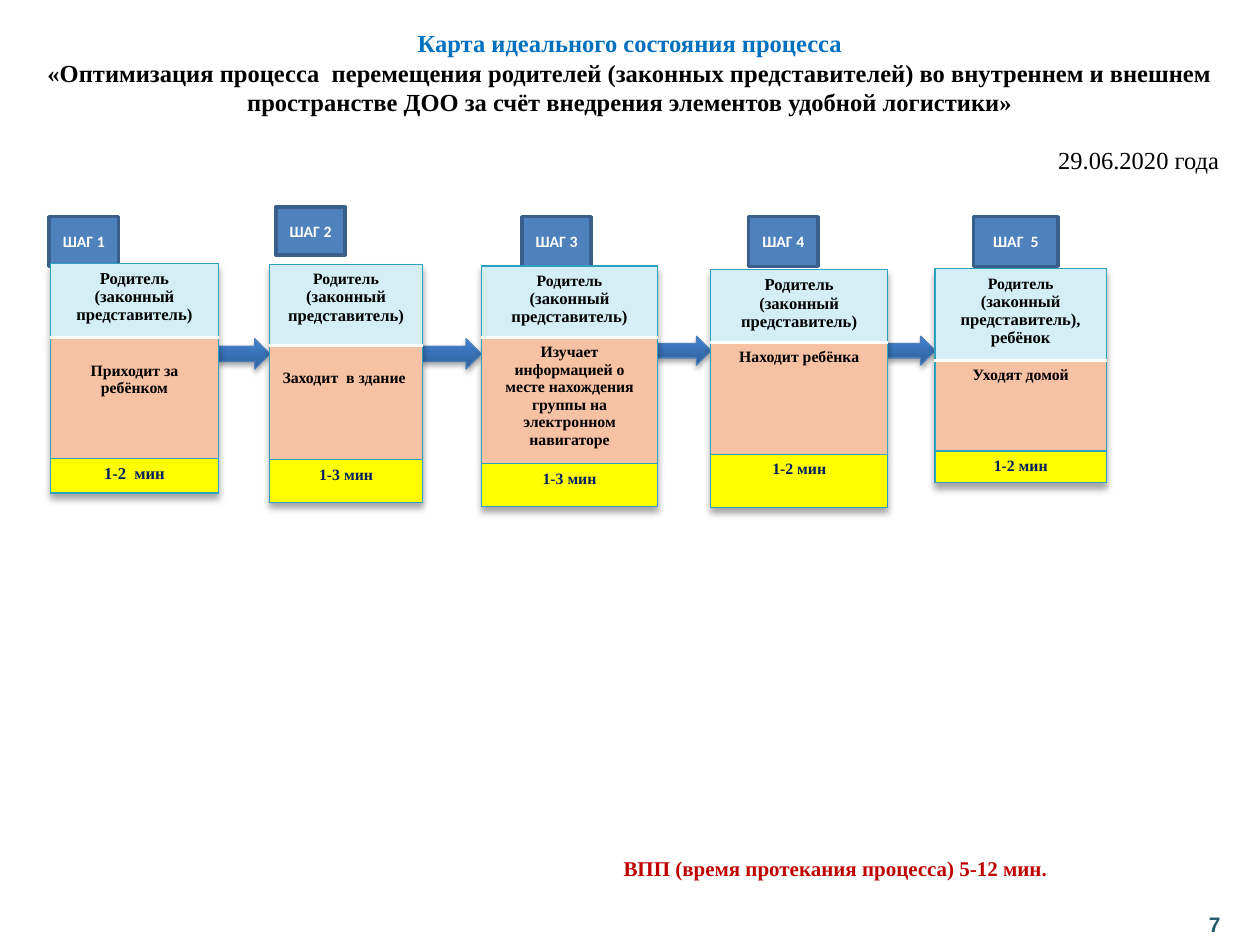
from lxml import etree
from pptx import Presentation
from pptx.dml.color import RGBColor
from pptx.enum.shapes import MSO_SHAPE
from pptx.enum.text import MSO_ANCHOR, PP_ALIGN
from pptx.oxml.ns import qn
from pptx.util import Cm, Pt

CENTER, LEFT, RIGHT = PP_ALIGN.CENTER, PP_ALIGN.LEFT, PP_ALIGN.RIGHT
MIDDLE = MSO_ANCHOR.MIDDLE
RECTANGLE, ARROW = MSO_SHAPE.RECTANGLE, MSO_SHAPE.RIGHT_ARROW
SERIF = "Times New Roman"

COLORS = {
    "black": "000000", "white": "FFFFFF", "title": "0070C0", "total": "C00000",
    "number": "215968", "tag": "4F81BD", "tag_line": "3A5F8C",
    "arrow_dark": "2F5F99", "arrow_light": "3D7CC7", "arrow_line": "4B7EBC",
    "who": "D3EEF5", "action": "F7C1A4", "time": "FFFF00",
    "time_text": "002060", "border": "2DA2BF",
}

# Content: lengths in cm; "who" holds paragraphs made of (text, size) runs
TWO_LINES = [[("Родитель", 9)], [("(законный представитель)", 9.5)]]
STEPS = [
    {"tag": "ШАГ 1", "tag_box": (0.99, 4.37, 1.4, 1), "card": (1.02, 5.31, 3.38),
     "rows": (1.5, 2.44, 0.69), "who": [[("Родитель (законный представитель)", 9.5)]],
     "action": "Приходит за ребёнком", "action_top": 0.49,
     "time": "1-2  мин", "time_size": 9.5},
    {"tag": "ШАГ 2", "tag_box": (5.56, 4.17, 1.4, 0.97), "card": (5.44, 5.33, 3.07),
     "rows": (1.63, 2.31, 0.86), "who": TWO_LINES,
     "action": "Заходит  в здание ", "action_top": 0.49,
     "time": "1-3 мин", "time_size": 9},
    {"tag": "ШАГ 3", "tag_box": (10.52, 4.37, 1.4, 1), "card": (9.7, 5.36, 3.56),
     "rows": (1.42, 2.54, 0.86), "who": TWO_LINES,
     "action": "Изучает информацией о месте нахождения группы на электронном навигаторе",
     "action_top": 0.13, "time": "1-3 мин", "time_size": 9},
    {"tag": "ШАГ 4", "tag_box": (15.09, 4.37, 1.4, 1), "card": (14.33, 5.44, 3.56),
     "rows": (1.45, 2.26, 1.07), "who": [[("Родитель (законный представитель)", 9.5)]],
     "action": "Находит ребёнка", "action_top": 0.13,
     "time": "1-2 мин", "time_size": 9},
    {"tag": "ШАГ  5", "tag_box": (19.63, 4.37, 1.7, 1), "card": (18.85, 5.42, 3.45),
     "rows": (1.83, 1.83, 0.61),
     "who": [[("Родитель ", 9), ("(законный представитель), ребёнок", 9.5)]],
     "action": "Уходят домой", "action_top": 0.13,
     "time": "1-2 мин", "time_size": 9},
]
ARROW_ROWS = [(6.83, 0.61), (6.83, 0.61), (6.78, 0.58), (6.78, 0.58)]  # top, height

TITLE = [
    ("Карта идеального состояния процесса", "title"),
    ("«Оптимизация процесса  перемещения родителей (законных представителей) "
     "во внутреннем и внешнем пространстве ДОО за счёт внедрения элементов "
     "удобной логистики»", "black"),
]
# box, paragraphs, alignment, font, size, bold
TEXTS = [
    ((0, 0.45, 25.4, 2.1), TITLE, CENTER, SERIF, 14, True),
    ((18, 2.8, 6.83, 0.88), [("29.06.2020 года", "black")], RIGHT, SERIF, 14, False),
    ((12.32, 17.12, 10.31, 0.76),
     [("ВПП (время протекания процесса) 5-12 мин.", "total")], LEFT, SERIF, 12, True),
    ((24, 18.26, 0.97, 0.79), [("7", "number")], CENTER, "Arial", 12, True),
]


def rgb(name):
    return RGBColor.from_string(COLORS[name])


def style(paragraph, size, color, font=SERIF, bold=True, align=CENTER):
    paragraph.alignment = align
    paragraph.font.name = font
    paragraph.font.size = Pt(size)
    paragraph.font.bold = bold
    paragraph.font.color.rgb = rgb(color)


def add_shadow(parent, position, blur, distance):
    effects = etree.Element(qn("a:effectLst"))
    shadow = etree.SubElement(
        effects, qn("a:outerShdw"), blurRad=str(Pt(blur)), dist=str(Pt(distance)),
        dir="5400000", rotWithShape="0")
    color = etree.SubElement(shadow, qn("a:srgbClr"), val=COLORS["black"])
    etree.SubElement(color, qn("a:alpha"), val="35000")
    parent.insert(position, effects)


def set_borders(cell, top, bottom):
    properties = cell._tc.get_or_add_tcPr()
    sides = [("a:lnL", "border"), ("a:lnR", "border"), ("a:lnT", top), ("a:lnB", bottom)]
    for index, (tag, color) in enumerate(sides):
        line = etree.Element(qn(tag), w=str(Pt(2 if color == "white" else 0.79)))
        fill = etree.SubElement(line, qn("a:solidFill"))
        etree.SubElement(fill, qn("a:srgbClr"), val=COLORS[color])
        properties.insert(index, line)


def add_text(slide, box, lines, align, font, size, bold):
    frame = slide.shapes.add_textbox(*map(Cm, box)).text_frame
    frame.word_wrap = True
    for index, (text, color) in enumerate(lines):
        paragraph = frame.paragraphs[0] if index == 0 else frame.add_paragraph()
        paragraph.text = text
        style(paragraph, size, color, font, bold, align)


def add_tag(slide, step):
    shape = slide.shapes.add_shape(RECTANGLE, *map(Cm, step["tag_box"]))
    shape.shadow.inherit = False
    shape.fill.solid()
    shape.fill.fore_color.rgb = rgb("tag")
    shape.line.color.rgb = rgb("tag_line")
    shape.line.width = Pt(2)
    frame = shape.text_frame
    frame.margin_left = frame.margin_right = 0
    frame.vertical_anchor = MIDDLE
    frame.text = step["tag"]
    style(frame.paragraphs[0], 9, "white", "Calibri")


def add_arrow(slide, step, following, top, height):
    left, _, width = step["card"]
    start = left + width
    shape = slide.shapes.add_shape(
        ARROW, Cm(start), Cm(top), Cm(following["card"][0] - start), Cm(height))
    shape.fill.gradient()
    shape.fill.gradient_angle = 90
    stops = shape.fill.gradient_stops
    for stop, color, position in zip(stops, ("arrow_dark", "arrow_light"), (0, 0.8)):
        stop.color.rgb = rgb(color)
        stop.position = position
    shape.line.color.rgb = rgb("arrow_line")
    shape.line.width = Pt(0.75)
    properties = shape._element.spPr
    add_shadow(properties, len(properties), 3.1, 1.8)


def add_card(slide, step):
    left, top, width = step["card"]
    table = slide.shapes.add_table(
        3, 1, Cm(left), Cm(top), Cm(width), Cm(sum(step["rows"]))).table
    table.horz_banding = False
    add_shadow(table._tbl.tblPr, 0, 4, 3)
    rows = [
        ("who", step["who"], "black", "border", "white"),
        ("action", [[(step["action"], 9)]], "black", "white", "border"),
        ("time", [[(step["time"], step["time_size"])]], "time_text", "border", "border"),
    ]
    for index, (fill, paragraphs, color, upper, lower) in enumerate(rows):
        table.rows[index].height = Cm(step["rows"][index])
        cell = table.cell(index, 0)
        cell.fill.solid()
        cell.fill.fore_color.rgb = rgb(fill)
        set_borders(cell, upper, lower)
        if fill == "action":
            cell.margin_top = Cm(step["action_top"])
        frame = cell.text_frame
        for number, runs in enumerate(paragraphs):
            paragraph = frame.paragraphs[0] if number == 0 else frame.add_paragraph()
            style(paragraph, runs[0][1], color)
            for text, size in runs:
                run = paragraph.add_run()
                run.text = text
                run.font.size = Pt(size)


def main():
    presentation = Presentation()
    presentation.slide_width, presentation.slide_height = Cm(25.4), Cm(19.05)
    slide = presentation.slides.add_slide(presentation.slide_layouts[6])
    for step in STEPS:
        add_tag(slide, step)
    for text in TEXTS:
        add_text(slide, *text)
    for step, following, row in zip(STEPS, STEPS[1:], ARROW_ROWS):
        add_arrow(slide, step, following, *row)
    for step in STEPS:
        add_card(slide, step)
    presentation.save("out.pptx")


if __name__ == "__main__":
    main()
